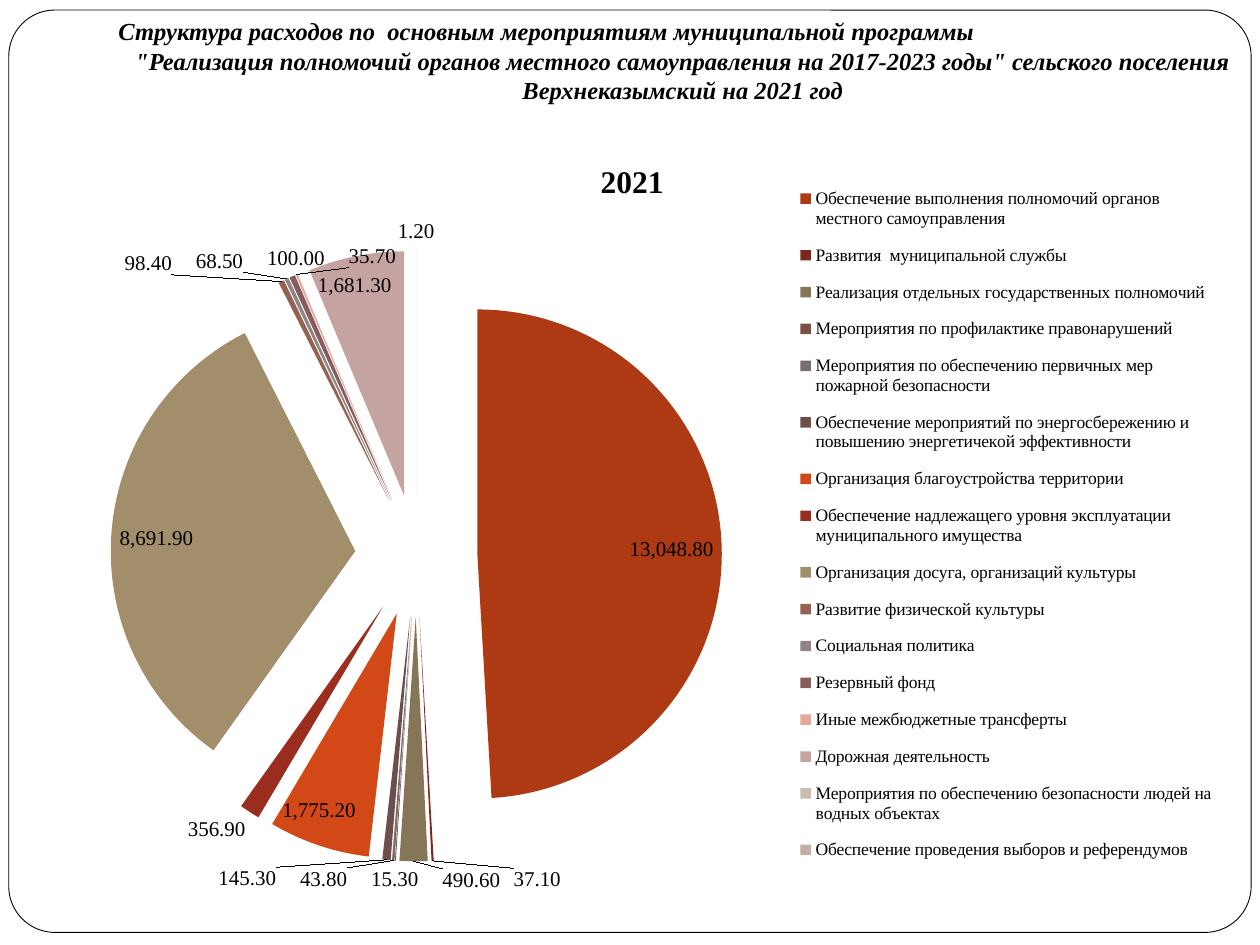
from lxml import etree
from pptx import Presentation
from pptx.chart.data import CategoryChartData
from pptx.dml.color import RGBColor
from pptx.enum import chart as charts, shapes, text
from pptx.oxml import parse_xml
from pptx.oxml.ns import nsdecls, qn
from pptx.util import Inches, Pt

COLORS = {"ink": "000000", "paper": "FFFFFF"}
FONT = "Times New Roman"
EXPENSES = [
    ("Обеспечение выполнения полномочий органов местного самоуправления", 13048.8, "AE3A14"),
    ("Развития  муниципальной службы", 37.1, "80251A"),
    ("Реализация отдельных государственных полномочий", 490.6, "867557"),
    ("Мероприятия по профилактике правонарушений", 15.3, "7B5143"),
    ("Мероприятия по обеспечению первичных мер пожарной безопасности", 43.8, "786D6E"),
    ("Обеспечение мероприятий по энергосбережению и повышению энергетичекой эффективности",
     145.3, "6E4D4D"),
    ("Организация благоустройства территории", 1775.2, "D34817"),
    ("Обеспечение надлежащего уровня эксплуатации муниципального имущества", 356.9, "9B2D1F"),
    ("Организация досуга, организаций культуры", 8691.9, "A28E6A"),
    ("Развитие физической культуры", 98.4, "956251"),
    ("Социальная политика", 68.5, "918485"),
    ("Резервный фонд", 100, "855D5D"),
    ("Иные межбюджетные трансферты", 35.7, "E6A89C"),
    ("Дорожная деятельность", 1681.3, "C5A3A1"),
    ("Мероприятия по обеспечению безопасности людей на водных объектах", 1.2, "C9BEAE"),
    ("Обеспечение проведения выборов и референдумов", 0, "C2ADA8"),
]


def rgb(name):
    return RGBColor.from_string(COLORS.get(name, name))


def place(element, before, **fractions):
    """Fix a chart part at fractions of the chart area, ahead of the named siblings."""
    for old in element.findall(qn("c:layout")):
        element.remove(old)
    inner = '<c:layoutTarget val="inner"/>' if element.tag == qn("c:plotArea") else ""
    modes = "".join(f'<c:{key}Mode val="edge"/>' for key in "xy")
    values = "".join(f'<c:{key} val="{value}"/>' for key, value in fractions.items())
    layout = parse_xml(f'<c:layout {nsdecls("c")}><c:manualLayout>{inner}{modes}{values}'
                       "</c:manualLayout></c:layout>")
    following = next(child for child in element if child.tag in [qn(tag) for tag in before])
    following.addprevious(layout)


class SlideBuilder:
    def __init__(self, slide):
        self.slide = slide

    def style(self, font, size, bold=False, italic=False):
        font.name, font.size, font.bold, font.italic = FONT, Pt(size), bold, italic
        font.color.rgb = rgb("ink")

    def frame(self, left, top, width, height):
        shape = self.slide.shapes.add_shape(
            shapes.MSO_SHAPE.ROUNDED_RECTANGLE, *map(Inches, (left, top, width, height)))
        shape.adjustments[0] = 0.05
        shape.shadow.inherit = False
        shape.fill.solid()
        shape.fill.fore_color.rgb = rgb("paper")
        shape.line.color.rgb = rgb("ink")
        shape.line.width = Pt(0.5)
        self.slide.shapes._spTree.insert(2, shape._element)

    def title(self, lead, rest, left, top, width, height):
        title = self.slide.shapes.title
        title.left, title.top, title.width, title.height = map(Inches, (left, top, width, height))
        frame = title.text_frame
        frame.word_wrap = True
        frame.auto_size = text.MSO_AUTO_SIZE.NONE
        frame.vertical_anchor = text.MSO_ANCHOR.BOTTOM
        frame.margin_bottom = Inches(0.33)
        frame.text = f"{lead}\n{rest}"
        for paragraph in frame.paragraphs:
            paragraph.alignment = text.PP_ALIGN.CENTER
            paragraph.line_spacing = 1.0
            paragraph.space_before = Pt(0)
            self.style(paragraph.font, 14, bold=True, italic=True)
        first = frame.paragraphs[0]
        first.alignment = text.PP_ALIGN.LEFT
        first._p.get_or_add_pPr().set("marL", str(Inches(0.21)))

    def pie(self, name, rows, left, top, width, height):
        data = CategoryChartData(number_format="#,##0.00")
        data.categories = [label for label, _, _ in rows]
        data.add_series(name, [value for _, value, _ in rows])
        chart = self.slide.shapes.add_chart(
            charts.XL_CHART_TYPE.PIE, *map(Inches, (left, top, width, height)), data).chart
        self.style(chart.font, 10)

        chart.has_title = True
        chart.chart_title.text_frame.text = name
        self.style(chart.chart_title.text_frame.paragraphs[0].font, 18, bold=True)
        place(chart.chart_title._element, ["c:overlay"], x=0.47, y=0.04)

        chart.has_legend = True
        chart.legend.position = charts.XL_LEGEND_POSITION.RIGHT
        chart.legend.include_in_layout = False
        self.style(chart.legend.font, 10)
        place(chart.legend._element, ["c:overlay"], x=0.635, y=0.06, w=0.36, h=0.9)
        place(chart._chartSpace.chart.plotArea, ["c:pieChart"], x=0.06, y=0.16, w=0.52, h=0.78)

        plot = chart.plots[0]
        plot.vary_by_categories = True
        series = plot.series[0]
        for index, (_, _, color) in enumerate(rows):
            fill = series.points[index].format.fill
            fill.solid()
            fill.fore_color.rgb = rgb(color)
        explosion = parse_xml(f'<c:explosion {nsdecls("c")} val="25"/>')
        series._element.find(qn("c:dPt")).addprevious(explosion)

        labels = series.data_labels
        labels.show_value = True
        labels.number_format = "#,##0.00;;"  # zero stays unlabelled
        labels.number_format_is_linked = False
        labels.position = charts.XL_LABEL_POSITION.BEST_FIT
        self.style(labels.font, 12)
        leader = labels._element.find(qn("c:showLeaderLines"))
        if leader is None:
            leader = etree.SubElement(labels._element, qn("c:showLeaderLines"))
        leader.set("val", "1")


def main():
    presentation = Presentation()
    presentation.slide_width, presentation.slide_height = Inches(10), Inches(7.5)
    builder = SlideBuilder(presentation.slides.add_slide(presentation.slide_layouts[5]))
    builder.frame(0.07, 0.08, 9.86, 7.32)
    builder.title(
        "Структура расходов по  основным мероприятиям муниципальной программы",
        '"Реализация полномочий органов местного самоуправления на 2017-2023 годы" '
        "сельского поселения Верхнеказымский на 2021 год",
        0.63, 0.29, 9.37, 0.87)
    builder.pie("2021", EXPENSES, 0.28, 0.99, 9.45, 6.22)
    presentation.save("out.pptx")


if __name__ == "__main__":
    main()
